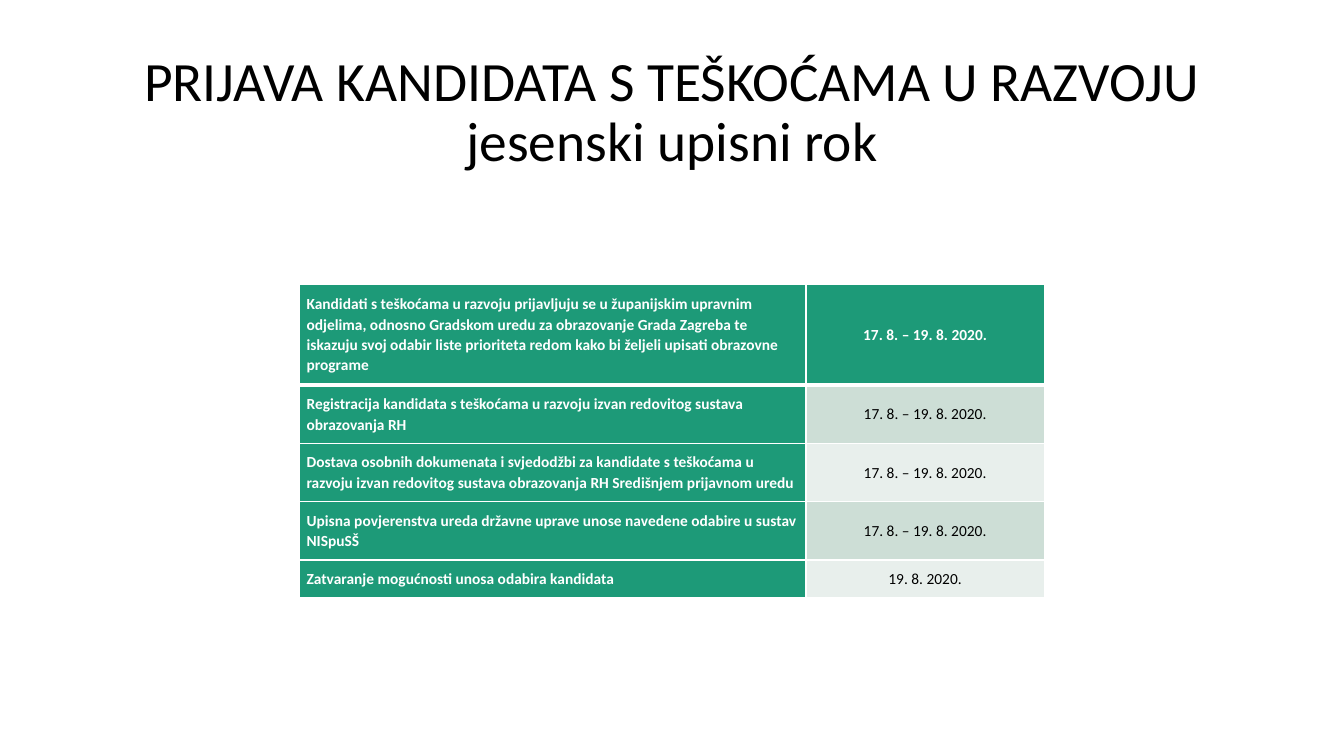
import pptx
import pptx.dml.color
import pptx.enum.text
import pptx.oxml.ns
import pptx.util
from lxml import etree

Pt = pptx.util.Pt
PP_ALIGN = pptx.enum.text.PP_ALIGN
MIDDLE = pptx.enum.text.MSO_ANCHOR.MIDDLE

FONT = "Calibri"
GREEN, WHITE, BLACK = "1D9A78", "FFFFFF", "000000"
BANDS = ["CDDED6", "E8EFEC"]
TITLE = "PRIJAVA KANDIDATA S TEŠKOĆAMA U RAZVOJU\vjesenski upisni rok"
PERIOD = "17. 8. – 19. 8. 2020."
DEADLINES = [
    ("Kandidati s teškoćama u razvoju prijavljuju se u županijskim upravnim "
     "odjelima, odnosno Gradskom uredu za obrazovanje Grada Zagreba te "
     "iskazuju svoj odabir liste prioriteta redom kako bi željeli upisati "
     "obrazovne programe", PERIOD, 72),
    ("Registracija kandidata s teškoćama u razvoju izvan redovitog sustava "
     "obrazovanja RH", PERIOD, 41.6),
    ("Dostava osobnih dokumenata i svjedodžbi za kandidate s teškoćama u "
     "razvoju izvan redovitog sustava obrazovanja RH Središnjem prijavnom "
     "uredu", PERIOD, 41.6),
    ("Upisna povjerenstva ureda državne uprave unose navedene odabire u "
     "sustav NISpuSŠ", PERIOD, 41.6),
    ("Zatvaranje mogućnosti unosa odabira kandidata", "19. 8. 2020.", 26.8),
]


def color(value):
    return pptx.dml.color.RGBColor.from_string(value)


def format_paragraph(paragraph, size, text_color, bold, alignment, spacing):
    paragraph.alignment = alignment
    paragraph.line_spacing = spacing
    paragraph.font.name = FONT
    paragraph.font.size = Pt(size)
    paragraph.font.bold = bold
    paragraph.font.color.rgb = color(text_color)


def add_title(slide, left, top, width, height):
    title = slide.shapes.title
    title.left, title.top = Pt(left), Pt(top)
    title.width, title.height = Pt(width), Pt(height)
    frame = title.text_frame
    frame.text = TITLE
    frame.word_wrap = True
    frame.auto_size = pptx.enum.text.MSO_AUTO_SIZE.NONE
    frame.vertical_anchor = MIDDLE
    format_paragraph(frame.paragraphs[0], 39.6, BLACK, False, PP_ALIGN.CENTER, 0.9)


def set_borders(cell, widths):
    properties = cell._tc.get_or_add_tcPr()
    for side, width in widths.items():
        line = etree.SubElement(properties, pptx.oxml.ns.qn(f"a:ln{side}"), w=str(Pt(width)))
        fill = etree.SubElement(line, pptx.oxml.ns.qn("a:solidFill"))
        etree.SubElement(fill, pptx.oxml.ns.qn("a:srgbClr"), val=WHITE)


def fill_cell(cell, text, row, column):
    strong = row == 0 or column == 0
    set_borders(cell, {"L": 1, "R": 1, "T": 3 if row == 1 else 1, "B": 3 if row == 0 else 1})
    cell.fill.solid()
    cell.fill.fore_color.rgb = color(GREEN if strong else BANDS[(row - 1) % 2])
    cell.vertical_anchor = MIDDLE
    cell.margin_left = cell.margin_right = cell.margin_top = Pt(5)
    cell.margin_bottom = Pt(5.6)
    cell.text = text
    format_paragraph(cell.text_frame.paragraphs[0], 11, WHITE if strong else BLACK, strong,
                     PP_ALIGN.CENTER if column else PP_ALIGN.LEFT, 1.07)


def add_deadlines(slide, left, top, width, height):
    table = slide.shapes.add_table(len(DEADLINES), 2, Pt(left), Pt(top),
                                   Pt(width), Pt(height)).table
    for column, share in zip(table.columns, (0.68, 0.32)):
        column.width = Pt(width * share)
    for row, (step, date, row_height) in enumerate(DEADLINES):
        table.rows[row].height = Pt(row_height)
        for column, text in enumerate((step, date)):
            fill_cell(table.cell(row, column), text, row, column)


def main():
    presentation = pptx.Presentation()
    presentation.slide_width, presentation.slide_height = Pt(960), Pt(540)
    slide = presentation.slides.add_slide(presentation.slide_layouts[5])
    add_title(slide, 66, 28.75, 828, 104.4)
    add_deadlines(slide, 214, 203.2, 532, 223.6)
    presentation.save("out.pptx")


if __name__ == "__main__":
    main()
